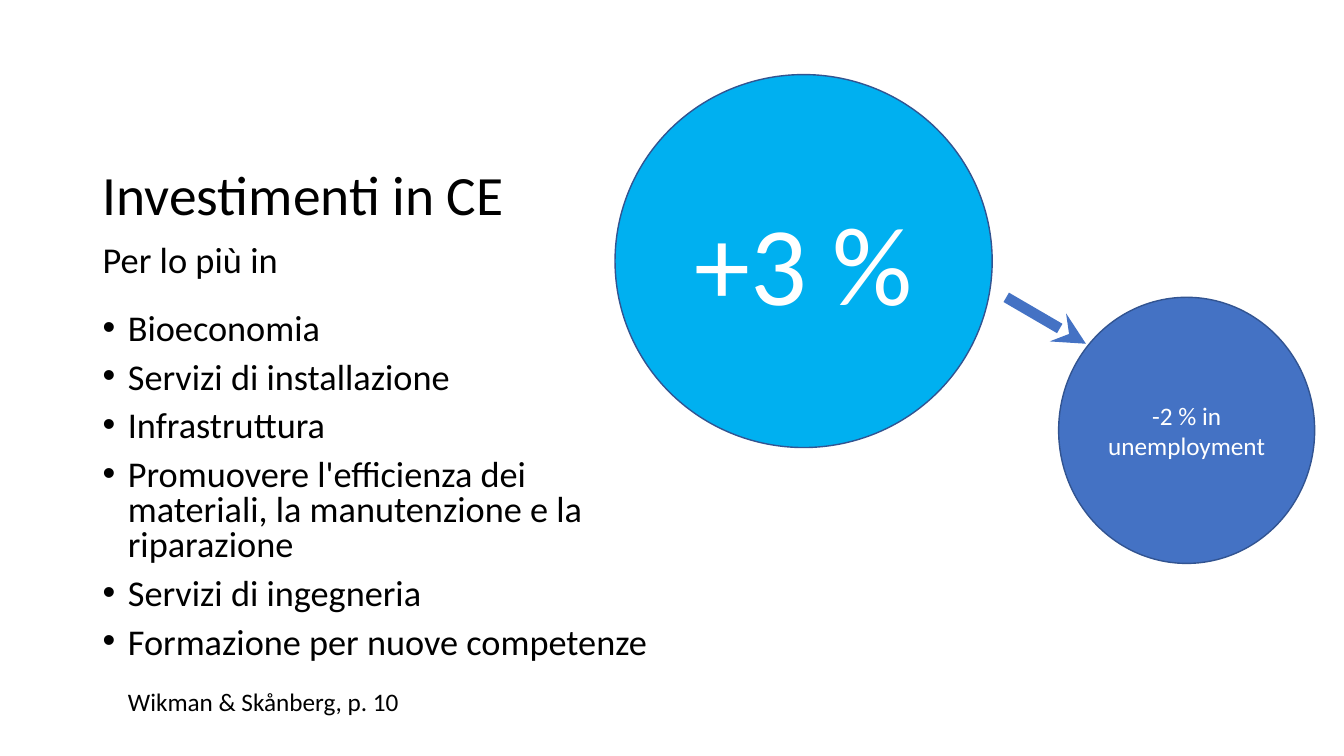
"""Build the slide on investments in the circular economy."""
from dataclasses import dataclass

from lxml import etree
from pptx import Presentation
from pptx.dml.color import RGBColor
from pptx.enum.shapes import MSO_CONNECTOR, MSO_SHAPE
from pptx.enum.text import MSO_ANCHOR, PP_ALIGN
from pptx.oxml.ns import qn
from pptx.slide import Slide
from pptx.text.text import TextFrame
from pptx.util import Inches, Pt

ELLIPSE = MSO_SHAPE.OVAL
STRAIGHT = MSO_CONNECTOR.STRAIGHT
TOP, MIDDLE = MSO_ANCHOR.TOP, MSO_ANCHOR.MIDDLE
LEFT, CENTER = PP_ALIGN.LEFT, PP_ALIGN.CENTER

WIDTH, HEIGHT = Inches(13.33), Inches(7.5)


@dataclass(frozen=True)
class Theme:
    font: str = "Calibri"
    ink: str = "000000"
    paper: str = "FFFFFF"
    growth: str = "00B0F0"
    jobs: str = "4472C4"
    outline: str = "325491"
    title_size: float = 39.6
    lead_size: float = 26
    item_size: float = 25.9
    figure_size: float = 80
    small_size: float = 18
    outline_width: float = 1
    arrow_width: float = 7.75


@dataclass(frozen=True)
class Area:
    """Position and extent in percent of the slide's size."""
    left: float
    top: float
    width: float
    height: float

    def lengths(self) -> tuple[int, int, int, int]:
        return across(self.left), down(self.top), across(self.width), down(self.height)


@dataclass(frozen=True)
class TextBlock:
    area: Area
    lines: tuple[str, ...]
    size: float
    anchor: MSO_ANCHOR = TOP
    spacing: float = 1.0
    gap: float = 0
    bulleted: bool = False


@dataclass(frozen=True)
class Circle:
    area: Area
    label: str
    size: float
    fill: str


THEME = Theme()

TEXT_BLOCKS = (
    TextBlock(Area(6.9, 21.47, 86.27, 9.2), ("Investimenti in CE",),
              THEME.title_size, anchor=MIDDLE, spacing=0.9),
    TextBlock(Area(6.9, 30.67, 50.04, 7.2), ("Per lo più in",), THEME.lead_size),
    TextBlock(
        Area(6.9, 40.8, 42.54, 49.33),
        (
            "Bioeconomia",
            "Servizi di installazione",
            "Infrastruttura",
            "Promuovere l'efficienza dei materiali, la manutenzione e la riparazione",
            "Servizi di ingegneria",
            "Formazione per nuove competenze",
        ),
        THEME.item_size, spacing=0.8, gap=10, bulleted=True,
    ),
    TextBlock(Area(8.78, 90.13, 50.04, 5.33), ("Wikman & Skånberg, p. 10",),
              THEME.small_size),
)

CIRCLES = (
    Circle(Area(45.76, 9.87, 28.06, 49.33), "+3 %", THEME.figure_size, THEME.growth),
    Circle(Area(78.77, 39.33, 19.05, 35.2), "-2 % in unemployment",
           THEME.small_size, THEME.jobs),
)

EFFECT_ARROW = Area(74.87, 39.33, 5.93, 6.14)


def across(percent: float) -> int:
    return round(WIDTH * percent / 100)


def down(percent: float) -> int:
    return round(HEIGHT * percent / 100)


def write_lines(frame: TextFrame, lines: tuple[str, ...], size: float, color: str,
                align: PP_ALIGN = LEFT, spacing: float = 1.0, gap: float = 0,
                bulleted: bool = False) -> None:
    frame.word_wrap = True
    for index, line in enumerate(lines):
        paragraph = frame.add_paragraph() if index else frame.paragraphs[0]
        if bulleted:
            properties = paragraph._p.get_or_add_pPr()
            properties.set("marL", str(Inches(0.25)))
            properties.set("indent", str(-Inches(0.25)))
            etree.SubElement(properties, qn("a:buFont"), typeface="Arial")
            etree.SubElement(properties, qn("a:buChar"), char="•")
        paragraph.alignment = align
        paragraph.line_spacing = spacing
        if index:
            paragraph.space_before = Pt(gap)
        run = paragraph.add_run()
        run.text = line
        run.font.name = THEME.font
        run.font.size = Pt(size)
        run.font.color.rgb = RGBColor.from_string(color)


def draw_text(slide: Slide, block: TextBlock) -> None:
    frame = slide.shapes.add_textbox(*block.area.lengths()).text_frame
    frame.vertical_anchor = block.anchor
    write_lines(frame, block.lines, block.size, THEME.ink, spacing=block.spacing,
                gap=block.gap, bulleted=block.bulleted)


def draw_circle(slide: Slide, circle: Circle) -> None:
    disc = slide.shapes.add_shape(ELLIPSE, *circle.area.lengths())
    disc.shadow.inherit = False
    disc.fill.solid()
    disc.fill.fore_color.rgb = RGBColor.from_string(circle.fill)
    disc.line.color.rgb = RGBColor.from_string(THEME.outline)
    disc.line.width = Pt(THEME.outline_width)
    disc.text_frame.vertical_anchor = MIDDLE
    write_lines(disc.text_frame, (circle.label,), circle.size, THEME.paper, align=CENTER)


def draw_arrow(slide: Slide, area: Area) -> None:
    left, top, width, height = area.lengths()
    arrow = slide.shapes.add_connector(STRAIGHT, left, top, left + width, top + height)
    arrow.line.color.rgb = RGBColor.from_string(THEME.jobs)
    arrow.line.width = Pt(THEME.arrow_width)
    etree.SubElement(arrow.line._get_or_add_ln(), qn("a:tailEnd"), type="stealth")
    etree.SubElement(arrow._element.spPr, qn("a:effectLst"))


def main() -> None:
    deck = Presentation()
    deck.slide_width, deck.slide_height = WIDTH, HEIGHT
    slide = deck.slides.add_slide(deck.slide_layouts[6])
    for block in TEXT_BLOCKS:
        draw_text(slide, block)
    for circle in CIRCLES:
        draw_circle(slide, circle)
    draw_arrow(slide, EFFECT_ARROW)
    deck.save("out.pptx")


if __name__ == "__main__":
    main()
